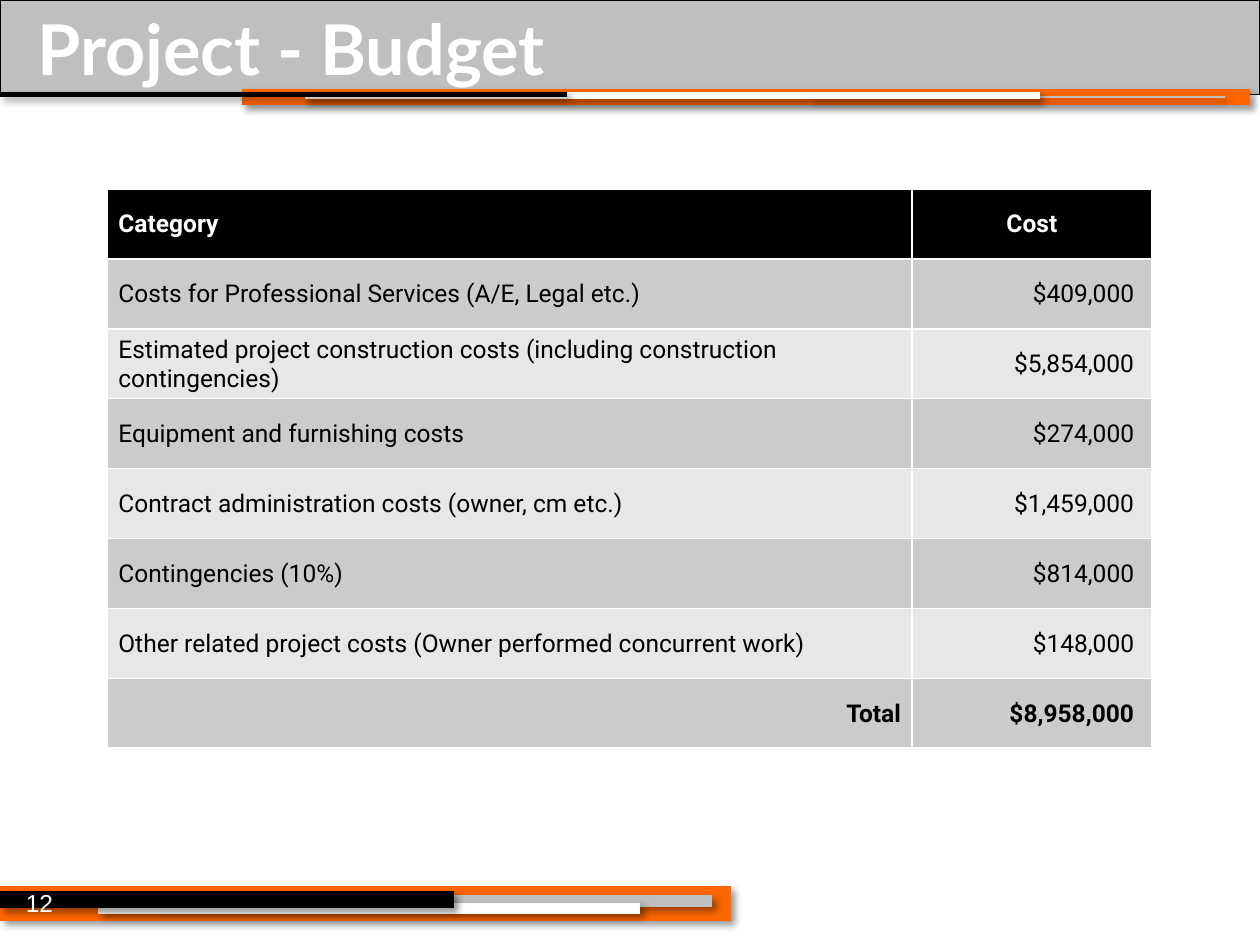
from lxml import etree
from pptx import Presentation
from pptx.dml.color import RGBColor
from pptx.enum import shapes, text
from pptx.oxml import ns
from pptx.util import Inches, Pt

BLACK = RGBColor(0x00, 0x00, 0x00)
WHITE = RGBColor(0xFF, 0xFF, 0xFF)
GRAY = RGBColor(0xBF, 0xBF, 0xBF)
ORANGE = RGBColor(0xFF, 0x66, 0x00)
BAND_DARK = RGBColor(0xCB, 0xCB, 0xCB)
BAND_LIGHT = RGBColor(0xE7, 0xE7, 0xE7)
LEFT, CENTER, RIGHT = text.PP_ALIGN.LEFT, text.PP_ALIGN.CENTER, text.PP_ALIGN.RIGHT

# Content
TITLE = "Project - Budget"
PAGE_NUMBER = "12"
BUDGET = [
    ("Category", "Cost"),
    ("Costs for Professional Services (A/E, Legal etc.)", "$409,000 "),
    ("Estimated project construction costs (including construction contingencies)",
     "$5,854,000 "),
    ("Equipment and furnishing costs", "$274,000 "),
    ("Contract administration costs (owner, cm etc.)", "$1,459,000 "),
    ("Contingencies (10%)", "$814,000 "),
    ("Other related project costs (Owner performed concurrent work)", "$148,000 "),
    ("Total", "$8,958,000 "),
]
COLUMN_WIDTHS = (6.39, 1.9)
TABLE_LEFT, TABLE_TOP, TABLE_HEIGHT = 0.85, 1.5, 4.44

# Decorative stripes, back to front: start x, end x, y, colour, width in points
STRIPES = [
    (1.92, 9.92, 0.77, ORANGE, 9),
    (0, 5.8, 7.17, ORANGE, 20),
    (5.65, 1.25, 7.15, GRAY, 6.5),
    (5.08, 0.78, 7.21, WHITE, 6.5),
    (3.6, 0, 7.14, BLACK, 10),
    (9.72, 6.42, 0.77, GRAY, 1.5),
    (8.25, 2.42, 0.76, WHITE, 4.25),
    (4.5, 0, 0.75, BLACK, 3),
]


def add_shadow(line):
    effects = etree.SubElement(line._element.spPr, ns.qn("a:effectLst"))
    shadow = etree.SubElement(effects, ns.qn("a:outerShdw"), blurRad=str(Pt(4)),
                              dist=str(Pt(3)), dir="2700000", rotWithShape="0")
    color = etree.SubElement(shadow, ns.qn("a:srgbClr"), val=str(BLACK))
    etree.SubElement(color, ns.qn("a:alpha"), val="40000")


def add_stripe(slide, start, end, y, color, width):
    stripe = slide.shapes.add_connector(
        shapes.MSO_CONNECTOR.STRAIGHT, Inches(start), Inches(y), Inches(end), Inches(y))
    stripe.line.color.rgb = color
    stripe.line.width = Pt(width)
    add_shadow(stripe)


def set_margins(owner, left, top, right, bottom):
    owner.margin_left, owner.margin_top = Inches(left), Inches(top)
    owner.margin_right, owner.margin_bottom = Inches(right), Inches(bottom)


def write(frame, words, font, size, color, bold=False, align=LEFT):
    frame.text = words
    paragraph = frame.paragraphs[0]
    paragraph.alignment = align
    style = paragraph.runs[0].font
    style.name, style.size, style.bold = font, Pt(size), bold
    style.color.rgb = color


def set_borders(cell, widths):
    for side, width in widths.items():
        border = etree.SubElement(cell._tc.get_or_add_tcPr(), ns.qn(f"a:{side}"),
                                  w=str(Pt(width)))
        fill = etree.SubElement(border, ns.qn("a:solidFill"))
        etree.SubElement(fill, ns.qn("a:srgbClr"), val=str(WHITE))


def add_budget_table(slide):
    table = slide.shapes.add_table(
        len(BUDGET), len(COLUMN_WIDTHS), Inches(TABLE_LEFT), Inches(TABLE_TOP),
        Inches(sum(COLUMN_WIDTHS)), Inches(TABLE_HEIGHT)).table
    table.horz_banding = False
    for column, width in zip(table.columns, COLUMN_WIDTHS):
        column.width = Inches(width)
    last = len(BUDGET) - 1
    for r, entry in enumerate(BUDGET):
        table.rows[r].height = Inches(TABLE_HEIGHT / len(BUDGET))
        header, total = r == 0, r == last
        band = BLACK if header else BAND_DARK if r % 2 else BAND_LIGHT
        for c, words in enumerate(entry):
            if header and c == 1:
                align = CENTER
            else:
                align = RIGHT if c == 1 or total else LEFT
            cell = table.cell(r, c)
            cell.vertical_anchor = text.MSO_ANCHOR.MIDDLE
            set_margins(cell, 0.09 if align == LEFT else 0.01, 0.01,
                        0.09 if align == RIGHT else 0.01, 0)
            set_borders(cell, {"lnL": 1, "lnR": 1, "lnT": 1.5 if r == 1 else 1,
                               "lnB": 1.5 if header else 1})
            cell.fill.solid()
            cell.fill.fore_color.rgb = band
            write(cell.text_frame, words, "Roboto", 14, WHITE if header else BLACK,
                  header or total, align)


def main():
    deck = Presentation()
    deck.slide_width, deck.slide_height = Inches(10), Inches(7.5)
    slide = deck.slides.add_slide(deck.slide_layouts[6])

    # Title band and stripes
    band = slide.shapes.add_shape(shapes.MSO_SHAPE.RECTANGLE, 0, 0, Inches(10), Inches(0.75))
    band.shadow.inherit = False
    band.fill.solid()
    band.fill.fore_color.rgb = GRAY
    band.line.color.rgb = BLACK
    band.line.width = Pt(0.75)
    for stripe in STRIPES:
        add_stripe(slide, *stripe)

    # Title
    title = slide.shapes.add_textbox(0, 0, Inches(10), Inches(0.75)).text_frame
    title.word_wrap = False
    title.vertical_anchor = text.MSO_ANCHOR.MIDDLE
    set_margins(title, 0.3, 0.05, 0.1, 0.05)
    write(title, TITLE, "Lato", 40, WHITE, bold=True)

    # Page number
    number = slide.shapes.add_textbox(
        Inches(0.02), Inches(7), Inches(0.5), Inches(0.42)).text_frame
    number.word_wrap = True
    write(number, PAGE_NUMBER, "Arial", 14, WHITE, align=RIGHT)

    add_budget_table(slide)
    deck.save("out.pptx")


if __name__ == "__main__":
    main()
